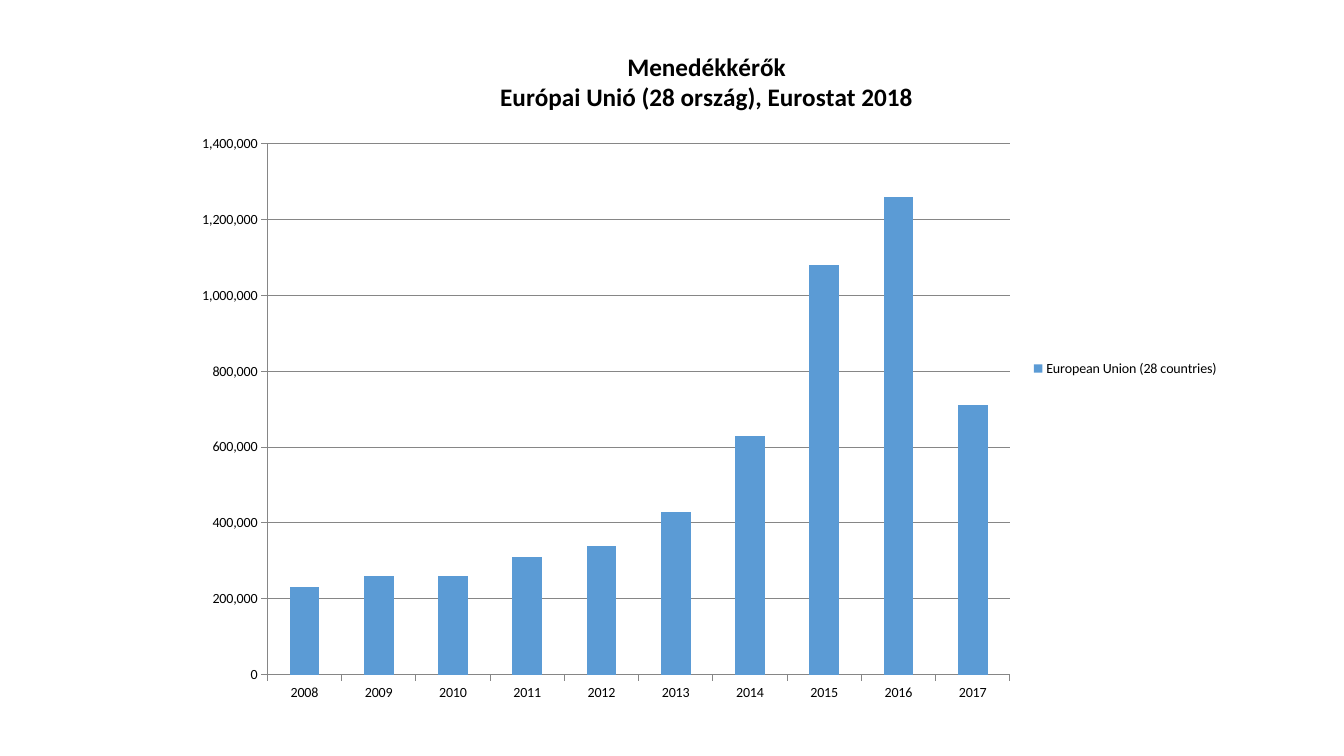
"""Build a slide with a column chart of asylum seekers in the European Union."""
from pptx import Presentation
from pptx.chart.data import CategoryChartData
from pptx.dml.color import RGBColor
from pptx.enum.chart import XL_CHART_TYPE as ChartType
from pptx.enum.chart import XL_LEGEND_POSITION as LegendPos
from pptx.enum.chart import XL_TICK_MARK as TickMark
from pptx.oxml import parse_xml
from pptx.oxml.ns import nsdecls, qn
from pptx.util import Emu, Pt

PX = 9525
FONT = "Calibri"
COLORS = {"text": "000000", "bar": "5B9BD5", "line": "868686"}
TITLE = ["Menedékkérők", "Európai Unió (28 ország), Eurostat 2018"]
SERIES = "European Union (28 countries)"
APPLICANTS = {
    "2008": 230000, "2009": 260000, "2010": 260000, "2011": 310000, "2012": 340000,
    "2013": 430000, "2014": 630000, "2015": 1080000, "2016": 1260000, "2017": 710000,
}
PLOT_LAYOUT = {"x": 0.08, "y": 0.17, "w": 0.71, "h": 0.78}


def px(n):
    """Turn pixels into EMU."""
    return Emu(n * PX)


def rgb(name):
    """Return a named colour."""
    return RGBColor.from_string(COLORS[name])


def style_font(font, size, bold=False):
    """Set face, size, weight and colour of a font."""
    font.name = FONT
    font.size = Pt(size)
    font.bold = bold
    font.color.rgb = rgb("text")


def style_line(line):
    """Give an axis or gridline its thin grey stroke."""
    line.color.rgb = rgb("line")
    line.width = Pt(0.75)


def style_axis(axis):
    """Style the line, ticks and labels of an axis."""
    axis.major_tick_mark = TickMark.OUTSIDE
    axis.minor_tick_mark = TickMark.NONE
    style_line(axis.format.line)
    style_font(axis.tick_labels.font, 10)


def add_title(chart, lines):
    """Write the chart title, one paragraph per line."""
    chart.has_title = True
    tf = chart.chart_title.text_frame
    for i, text in enumerate(lines):
        p = tf.add_paragraph() if i else tf.paragraphs[0]
        r = p.add_run()
        r.text = text
        style_font(r.font, 18, True)
    chart.chart_title.include_in_layout = False


def place_plot(chart, layout):
    """Fix the inner plot area as fractions of the chart."""
    area = chart.element.find(".//" + qn("c:plotArea"))
    for old in area.findall(qn("c:layout")):
        area.remove(old)
    modes = "".join(f'<c:{k}Mode val="edge"/>' for k in "xy")
    sizes = "".join(f'<c:{k} val="{v}"/>' for k, v in layout.items())
    area.insert(0, parse_xml(
        f'<c:layout {nsdecls("c")}><c:manualLayout><c:layoutTarget val="inner"/>'
        f"{modes}{sizes}</c:manualLayout></c:layout>"))


def add_column_chart(slide, x, y, w, h):
    """Add the column chart with its axes and legend."""
    data = CategoryChartData(number_format="#,##0")
    data.categories = list(APPLICANTS)
    data.add_series(SERIES, list(APPLICANTS.values()))
    chart = slide.shapes.add_chart(
        ChartType.COLUMN_CLUSTERED, px(x), px(y), px(w), px(h), data).chart
    style_font(chart.font, 10)
    add_title(chart, TITLE)

    plot = chart.plots[0]
    plot.gap_width = 150
    plot.vary_by_categories = False
    fill = plot.series[0].format.fill
    fill.solid()
    fill.fore_color.rgb = rgb("bar")

    style_axis(chart.category_axis)
    axis = chart.value_axis
    style_axis(axis)
    axis.minimum_scale, axis.maximum_scale, axis.major_unit = 0, 1400000, 200000
    axis.tick_labels.number_format = "#,##0"
    axis.tick_labels.number_format_is_linked = False
    axis.has_major_gridlines = True
    style_line(axis.major_gridlines.format.line)

    chart.has_legend = True
    chart.legend.position = LegendPos.RIGHT
    chart.legend.include_in_layout = False
    style_font(chart.legend.font, 10)
    place_plot(chart, PLOT_LAYOUT)


def main():
    """Build and save the slide."""
    prs = Presentation()
    prs.slide_width, prs.slide_height = px(1280), px(720)
    s = prs.slides.add_slide(prs.slide_layouts[6])
    add_column_chart(s, 175, 27, 996, 648)
    prs.save("out.pptx")


if __name__ == "__main__":
    main()
